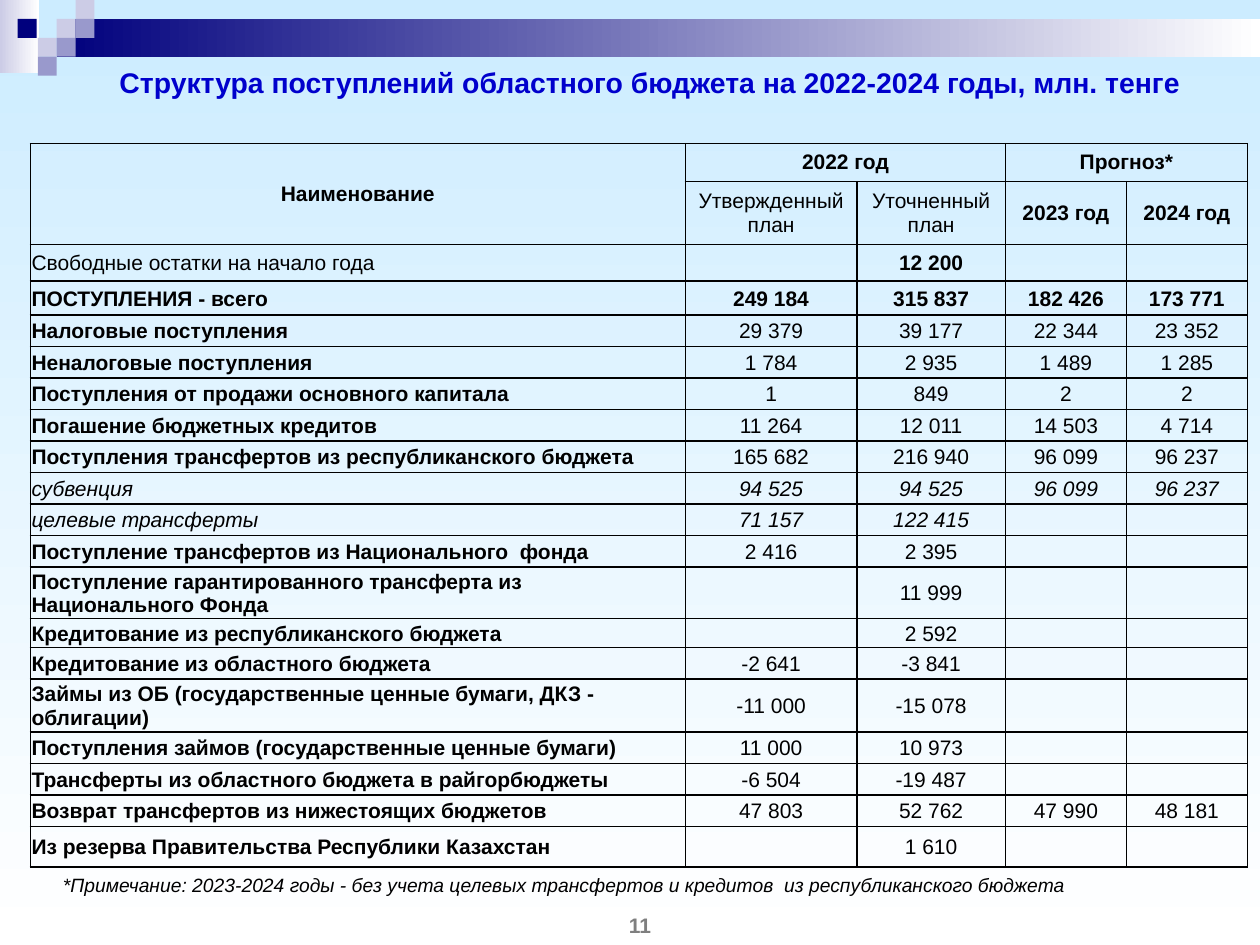
"""Build the slide on regional budget receipts for 2022-2024."""
from lxml import etree
from pptx import Presentation
from pptx.dml.color import RGBColor
from pptx.enum.shapes import MSO_SHAPE
from pptx.enum.text import MSO_ANCHOR, PP_ALIGN
from pptx.oxml.ns import qn
from pptx.util import Inches, Pt

RECT = MSO_SHAPE.RECTANGLE
MIDDLE = MSO_ANCHOR.MIDDLE
LEFT, CENTER = PP_ALIGN.LEFT, PP_ALIGN.CENTER
BLACK = RGBColor(0, 0, 0)
WHITE = RGBColor(255, 255, 255)
SKY = RGBColor(0xCC, 0xEC, 0xFF)
NAVY = RGBColor(0, 0, 0x7D)
LILAC = RGBColor(0xCC, 0xCC, 0xE6)
VIOLET = RGBColor(0x99, 0x99, 0xCC)
BLUE = RGBColor(0, 0, 0xCC)
GRAY = RGBColor(0x7F, 0x7F, 0x7F)


def blend(fill, start, angle):
    fill.gradient()
    fill.gradient_angle = angle
    for stop, color in zip(fill.gradient_stops, (start, WHITE)):
        stop.color.rgb = color


def write(frame, text, size, color, bold=False, italic=False, align=LEFT):
    para = frame.paragraphs[0]
    para.text = text
    para.alignment = align
    font = para.font
    font.name, font.size, font.color.rgb = "Arial", Pt(size), color
    font.bold, font.italic = bold, italic
    return para


deck = Presentation()
deck.slide_width, deck.slide_height = Inches(10), Inches(7.5)
slide = deck.slides.add_slide(deck.slide_layouts[6])
blend(slide.background.fill, SKY, 270)

bars = [
    (0, 0, 0.31, 0.58, LILAC),
    (0.45, 0.15, 9.55, 0.3, NAVY),
]
tiles = [
    (0.45, 0.15, LILAC),
    (0.6, 0, LILAC),
    (0.6, 0.15, VIOLET),
    (0.3, 0.3, LILAC),
    (0.14, 0.15, NAVY),
    (0.45, 0.3, VIOLET),
    (0.3, 0.45, VIOLET),
]
blocks = bars + [(x, y, 0.15, 0.15, color) for x, y, color in tiles]
for order, (x, y, wide, high, color) in enumerate(blocks):
    block = slide.shapes.add_shape(RECT, Inches(x), Inches(y), Inches(wide), Inches(high))
    block.shadow.inherit = False
    block.line.fill.background()
    if order < len(bars):
        blend(block.fill, color, 0)
    else:
        block.fill.solid()
        block.fill.fore_color.rgb = color

labels = [
    (0.85, 0.53, 9.06, 0.24, 0.1, "Структура поступлений областного бюджета на 2022-2024 годы, млн. тенге",
     16.2, BLUE, True, False, LEFT),
    (0.5, 6.93, 8.34, 0.18, 0,
     "*Примечание: 2023-2024 годы - без учета целевых трансфертов и кредитов  из республиканского бюджета",
     11, BLACK, False, True, LEFT),
    (4.08, 7.22, 2, 0.24, 0.1, "11", 12, GRAY, True, False, CENTER),
]
for x, y, wide, high, inset, *style in labels:
    box = slide.shapes.add_textbox(Inches(x), Inches(y), Inches(wide), Inches(high))
    frame = box.text_frame
    frame.word_wrap = True
    frame.vertical_anchor = MIDDLE
    frame.margin_left = frame.margin_right = Inches(inset)
    frame.margin_top = frame.margin_bottom = 0
    write(frame, *style)

rows = [
    (0.29, "bb", "Наименование", "2022 год", "", "Прогноз*", ""),
    (0.47, "bb", "", "Утвержденный план", "Уточненный план", "2023 год", "2024 год"),
    (0.29, "pb", "Свободные остатки на начало года", "", "12 200", "", ""),
    (0.27, "bb", "ПОСТУПЛЕНИЯ - всего", "249 184", "315 837", "182 426", "173 771"),
    (0.25, "bp", "Налоговые поступления", "29 379", "39 177", "22 344", "23 352"),
    (0.25, "bp", "Неналоговые поступления", "1 784", "2 935", "1 489", "1 285"),
    (0.25, "bp", "Поступления от продажи основного капитала", "1", "849", "2", "2"),
    (0.25, "bp", "Погашение бюджетных кредитов", "11 264", "12 011", "14 503", "4 714"),
    (0.25, "bp", "Поступления трансфертов из республиканского бюджета",
     "165 682", "216 940", "96 099", "96 237"),
    (0.25, "ii", "субвенция", "94 525", "94 525", "96 099", "96 237"),
    (0.25, "ii", "целевые трансферты", "71 157", "122 415", "", ""),
    (0.25, "bp", "Поступление трансфертов из Национального  фонда", "2 416", "2 395", "", ""),
    (0.39, "bp", "Поступление гарантированного трансферта из Национального Фонда",
     "", "11 999", "", ""),
    (0.23, "bp", "Кредитование из республиканского бюджета", "", "2 592", "", ""),
    (0.25, "bp", "Кредитование из областного бюджета", "-2 641", "-3 841", "", ""),
    (0.42, "bp", "Займы из ОБ (государственные ценные бумаги, ДКЗ - облигации)",
     "-11 000", "-15 078", "", ""),
    (0.25, "bp", "Поступления займов (государственные ценные бумаги)",
     "11 000", "10 973", "", ""),
    (0.25, "bp", "Трансферты из областного бюджета в райгорбюджеты",
     "-6 504", "-19 487", "", ""),
    (0.25, "bp", "Возврат трансфертов из нижестоящих бюджетов",
     "47 803", "52 762", "47 990", "48 181"),
    (0.32, "bp", "Из резерва Правительства Республики Казахстан", "", "1 610", "", ""),
]
widths = [5.2, 1.36, 1.18, 0.96, 0.96]
high = sum(row[0] for row in rows)
table = slide.shapes.add_table(
    len(rows), len(widths), Inches(0.24), Inches(1.14), Inches(sum(widths)), Inches(high)
).table
table.first_row = table.horz_banding = False
for column, wide in zip(table.columns, widths):
    column.width = Inches(wide)

for r, (high, style, *texts) in enumerate(rows):
    table.rows[r].height = Inches(high)
    head = r < 2
    for c, text in enumerate(texts):
        cell = table.cell(r, c)
        cell.fill.background()
        cell.vertical_anchor = MIDDLE
        cell.margin_left = cell.margin_right = Inches(0.1 if head else 0.01)
        cell.margin_top = Inches(0.05 if head else 0.01)
        cell.margin_bottom = Inches(0.05 if head else 0)
        mark = style[min(c, 1)]
        bold = mark == "b" and not (r == 1 and c in (1, 2))
        align = CENTER if head or c else LEFT
        write(cell.text_frame, text, 12, BLACK, bold, mark == "i", align)
        props = cell._tc.get_or_add_tcPr()
        for spot, side in enumerate(("a:lnL", "a:lnR", "a:lnT", "a:lnB")):
            line = etree.Element(qn(side), w=str(Pt(1)))
            fill = etree.SubElement(line, qn("a:solidFill"))
            etree.SubElement(fill, qn("a:srgbClr"), val=str(BLACK))
            props.insert(spot, line)

for first, last in (((0, 0), (1, 0)), ((0, 1), (0, 2)), ((0, 3), (0, 4))):
    table.cell(*first).merge(table.cell(*last))

deck.save("out.pptx")
